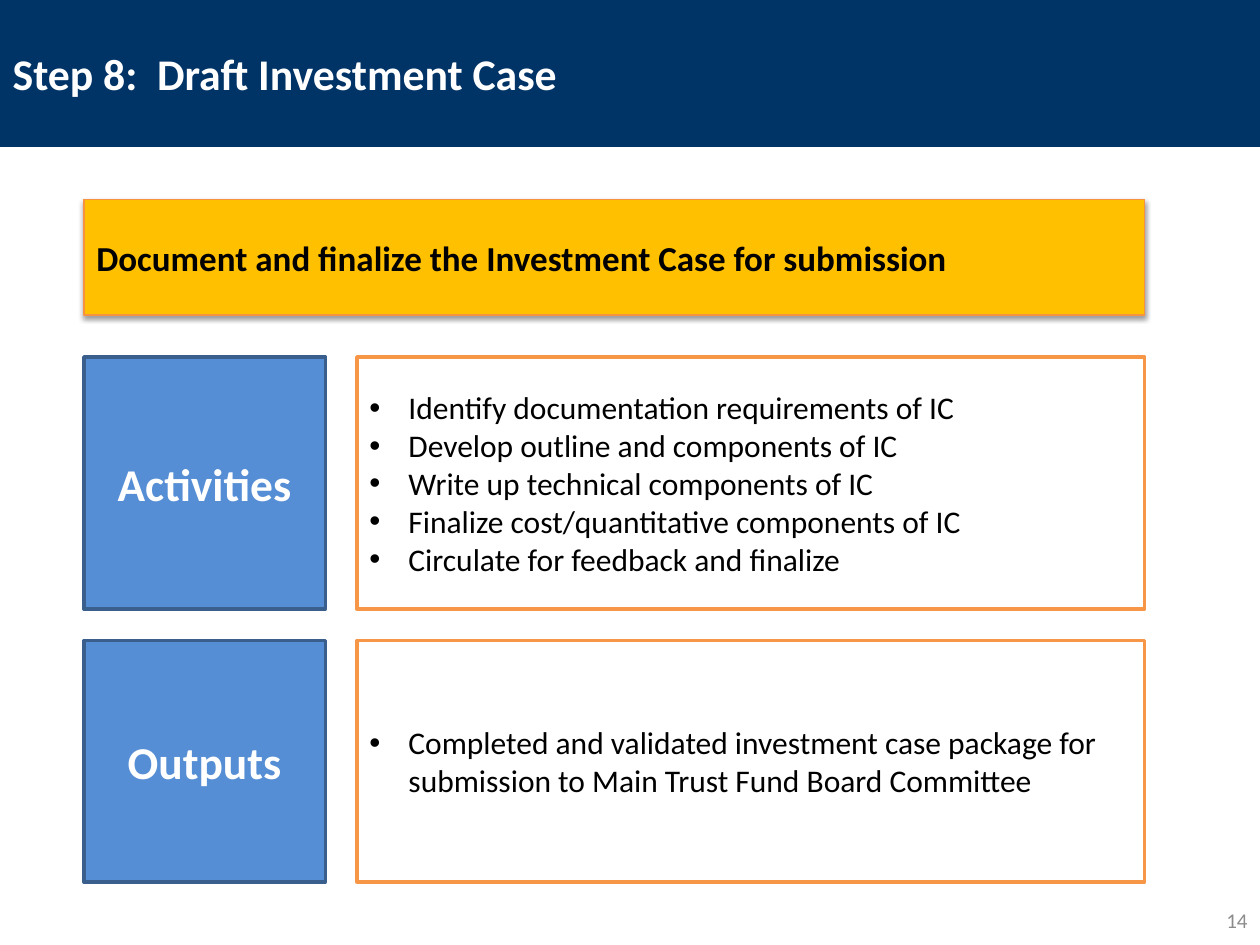
"""Build the Step 8 slide: a title band, a key message, and rows for activities and outputs."""
import lxml.etree
import pptx
import pptx.dml.color
import pptx.enum.shapes
import pptx.enum.text
import pptx.oxml
import pptx.oxml.ns
import pptx.util

THEME = {
    "font": "Calibri",
    "navy": "003366", "blue": "558ED5", "blue_edge": "3A5F8C",
    "gold": "FFC000", "gold_edge": "F69240", "orange": "F79646",
    "white": "FFFFFF", "black": "000000", "gray": "8C8C8C",
    "title": 25, "label": 26, "message": 20, "body": 18, "number": 12,
}
COLUMNS, ROWS = 120, 90
ALIGN = pptx.enum.text.PP_ALIGN

deck = pptx.Presentation()
deck.slide_width = pptx.util.Inches(10)
deck.slide_height = pptx.util.Inches(7.5)
column, row = deck.slide_width / COLUMNS, deck.slide_height / ROWS
page = deck.slides.add_slide(deck.slide_layouts[5])


def add_box(left, top, width, height, fill, edge=None, weight=2):
    """Add a rectangle placed in grid columns and rows."""
    box = page.shapes.add_shape(
        pptx.enum.shapes.MSO_SHAPE.RECTANGLE,
        round(left * column), round(top * row), round(width * column), round(height * row))
    box.shadow.inherit = False
    box.fill.solid()
    box.fill.fore_color.rgb = pptx.dml.color.RGBColor.from_string(THEME[fill])
    if edge:
        box.line.color.rgb = pptx.dml.color.RGBColor.from_string(THEME[edge])
        box.line.width = pptx.util.Pt(weight)
    else:
        box.line.fill.background()
    return box


def write(box, lines, size, color, bold=False, align=ALIGN.LEFT, bullet=False):
    """Fill a shape with one paragraph per line, centred vertically."""
    frame = box.text_frame
    frame.text = "\n".join(lines)
    frame.word_wrap = True
    frame.vertical_anchor = pptx.enum.text.MSO_ANCHOR.MIDDLE
    style = {"name": THEME["font"], "size": pptx.util.Pt(THEME[size]), "bold": bold}
    for para in frame.paragraphs:
        para.alignment = align
        for span in para.runs:
            for name, value in style.items():
                setattr(span.font, name, value)
            span.font.color.rgb = pptx.dml.color.RGBColor.from_string(THEME[color])
        if bullet:
            properties = para._p.get_or_add_pPr()
            indent = pptx.util.Inches(0.31)
            properties.set("marL", str(indent))
            properties.set("indent", str(-indent))
            for tag, key, value in (("a:buFont", "typeface", "Arial"), ("a:buChar", "char", "•")):
                mark = lxml.etree.SubElement(properties, pptx.oxml.ns.qn(tag))
                mark.set(key, value)


band = add_box(0, 0, COLUMNS, 14, "navy")
title = page.shapes.title
place = {
    "left": 0, "top": round(0.6 * row),
    "width": deck.slide_width, "height": round(12.8 * row),
}
for name, value in place.items():
    setattr(title, name, value)
write(title, ["Step 8:  Draft Investment Case"], "title", "white", bold=True)
band.element.addnext(title.element)

sections = [
    ("Activities", 34, 24, [
        "Identify documentation requirements of IC",
        "Develop outline and components of IC",
        "Write up technical components of IC",
        "Finalize cost/quantitative components of IC",
        "Circulate for feedback and finalize",
    ]),
    ("Outputs", 61, 23, [
        "Completed and validated investment case package for "
        "submission to Main Trust Fund Board Committee",
    ]),
]
for heading, top, height, points in sections:
    label = add_box(8, top, 23, height, "blue", "blue_edge")
    write(label, [heading], "label", "white", bold=True, align=ALIGN.CENTER)
    detail = add_box(34, top, 75, height, "white", "orange")
    write(detail, points, "body", "black", bullet=True)

message = add_box(8, 19, 101, 11, "gold", "gold_edge", 0.75)
write(message, ["Document and finalize the Investment Case for submission"],
      "message", "black", bold=True)
effects = message.element.spPr.find(pptx.oxml.ns.qn("a:effectLst"))
effects.append(pptx.oxml.parse_xml(
    f'<a:outerShdw {pptx.oxml.ns.nsdecls("a")} blurRad="{pptx.util.Pt(3.1)}" '
    f'dist="{pptx.util.Pt(1.6)}" dir="5400000" rotWithShape="0">'
    f'<a:srgbClr val="{THEME["black"]}"><a:alpha val="38000"/></a:srgbClr></a:outerShdw>'))

number = page.shapes.add_textbox(
    round(92 * column), round(85.2 * row), round(28 * column), round(4.8 * row))
write(number, ["14"], "number", "gray", align=ALIGN.RIGHT)

deck.save("out.pptx")
